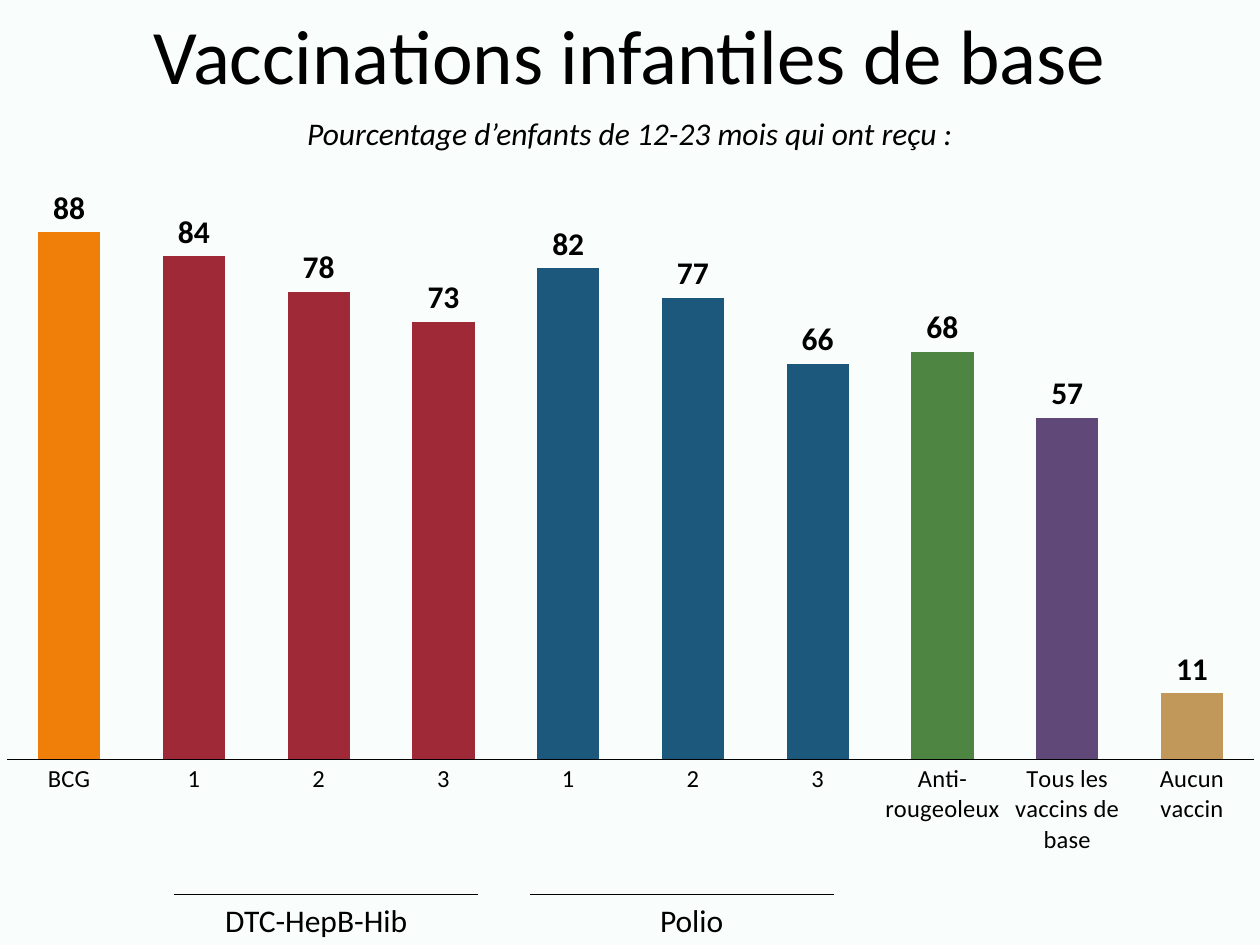
from lxml import etree
from pptx import Presentation
from pptx.chart import data as cd
from pptx.dml.color import RGBColor
from pptx.enum import chart as ch, shapes, text
from pptx.oxml import ns
from pptx.util import Inches, Pt

FONT, INK, PAPER = "Calibri", "000000", "F9FEFC"
TITLE = "Vaccinations infantiles de base"
SUB = "Pourcentage d’enfants de 12-23 mois qui ont reçu :"

# Category, percentage, bar colour
RED, BLUE = "9F2936", "1B587C"
BARS = [
    ("BCG", 88, "F07F09"),
    ("1", 84, RED), ("2", 78, RED), ("3", 73, RED),
    ("1", 82, BLUE), ("2", 77, BLUE), ("3", 66, BLUE),
    ("Anti- rougeoleux", 68, "4E8542"),
    ("Tous les vaccins de base", 57, "604878"),
    ("Aucun vaccin", 11, "C19859"),
]
# Group name, left of text, left of rule
GROUPS = [("DTC-HepB-Hib", 1.38, 1.38), ("Polio", 4.36, 4.21)]
BASE, WIDE, RULE = 7.1, 2.26, 2.41
PLOT = {"x": 0.017, "y": 0, "w": 0.966, "h": 0.833}


def rgb(code):
    return RGBColor.from_string(code)


def style(font, size, bold=False, italic=False):
    font.name, font.size = FONT, Pt(size)
    font.bold, font.italic = bold, italic
    font.color.rgb = rgb(INK)


def write(frame, words, size, italic=False):
    frame.word_wrap = True
    para = frame.paragraphs[0]
    para.alignment = text.PP_ALIGN.CENTER
    run = para.add_run()
    run.text = words
    style(run.font, size, italic=italic)
    return para


def label(slide, words, left, top, width, italic=False):
    box = slide.shapes.add_textbox(
        Inches(left), Inches(top), Inches(width), Inches(0.4))
    write(box.text_frame, words, 18, italic)
    box.text_frame.auto_size = text.MSO_AUTO_SIZE.SHAPE_TO_FIT_TEXT


def rule(slide, left, top, width):
    line = slide.shapes.add_connector(
        shapes.MSO_CONNECTOR.STRAIGHT, Inches(left), Inches(top),
        Inches(left + width), Inches(top))
    line.line.color.rgb = rgb(INK)
    line.line.width = Pt(0.5)
    etree.SubElement(line._element.spPr, ns.qn("a:effectLst"))


def place(chart):
    """Fix the inner plot area as shares of the chart."""
    area = chart._chartSpace.chart.plotArea
    for old in area.findall(ns.qn("c:layout")):
        area.remove(old)
    layout = etree.Element(ns.qn("c:layout"))
    manual = etree.SubElement(layout, ns.qn("c:manualLayout"))
    parts = [("layoutTarget", "inner"), ("xMode", "edge"), ("yMode", "edge")]
    for tag, val in parts + list(PLOT.items()):
        etree.SubElement(manual, ns.qn("c:" + tag)).set("val", str(val))
    area.insert(0, layout)


def draw(slide):
    data = cd.CategoryChartData()
    data.categories = [name for name, _, _ in BARS]
    data.add_series("Series 1", [val for _, val, _ in BARS])
    chart = slide.shapes.add_chart(
        ch.XL_CHART_TYPE.COLUMN_CLUSTERED, Inches(-0.12), Inches(1.27),
        Inches(10.25), Inches(5.71), data).chart
    chart.has_legend = chart.has_title = False
    style(chart.font, 10)
    place(chart)

    # Axes
    axis = chart.category_axis
    axis.major_tick_mark = ch.XL_TICK_MARK.NONE
    style(axis.tick_labels.font, 14)
    axis.format.line.color.rgb = rgb(INK)
    axis.format.line.width = Pt(0.75)
    scale = chart.value_axis
    scale.minimum_scale, scale.maximum_scale = 0, 100
    scale.has_major_gridlines = scale.visible = False

    # Bars and their values
    plot = chart.plots[0]
    plot.gap_width = 100
    plot.vary_by_categories = False
    bars = plot.series[0]
    for i, (_, _, color) in enumerate(BARS):
        fill = bars.points[i].format.fill
        fill.solid()
        fill.fore_color.rgb = rgb(color)
    tags = bars.data_labels
    tags.show_value = True
    tags.position = ch.XL_LABEL_POSITION.OUTSIDE_END
    style(tags.font, 18, bold=True)


def main():
    deck = Presentation()
    deck.slide_width, deck.slide_height = Inches(10), Inches(7.5)
    slide = deck.slides.add_slide(deck.slide_layouts[5])
    back = slide.background.fill
    back.solid()
    back.fore_color.rgb = rgb(PAPER)

    # Title and subtitle
    head = slide.shapes.title
    head.left, head.top = Inches(0), Inches(0)
    head.width, head.height = Inches(10), Inches(0.94)
    head.text_frame.vertical_anchor = text.MSO_ANCHOR.MIDDLE
    write(head.text_frame, TITLE, 44).line_spacing = 0.9

    draw(slide)
    label(slide, SUB, 0, 0.86, 10, italic=True)

    # Vaccine groups below the chart
    for name, left, start in GROUPS:
        label(slide, name, left, BASE, WIDE)
        rule(slide, start, BASE, RULE)

    deck.save("out.pptx")


if __name__ == "__main__":
    main()
